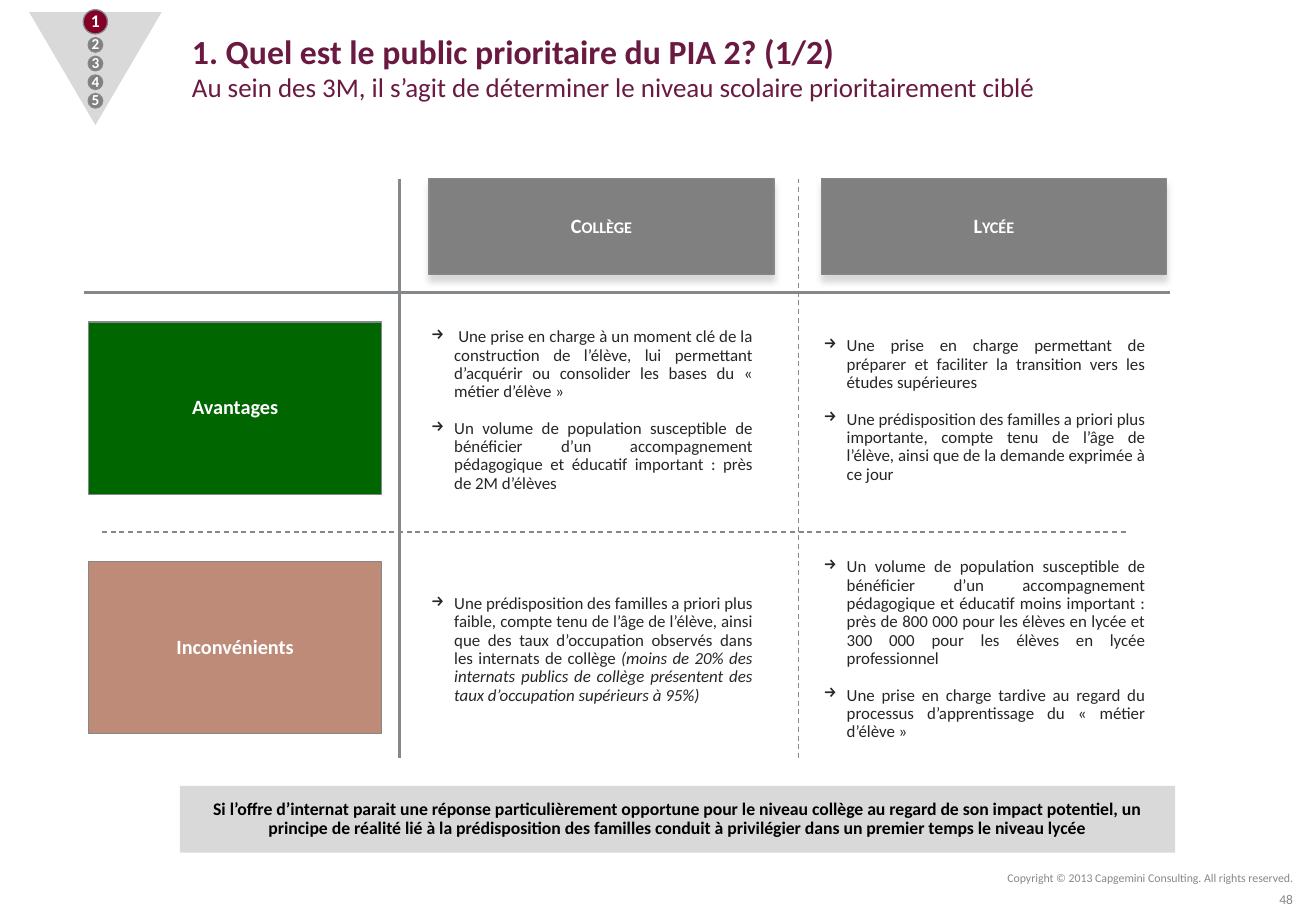
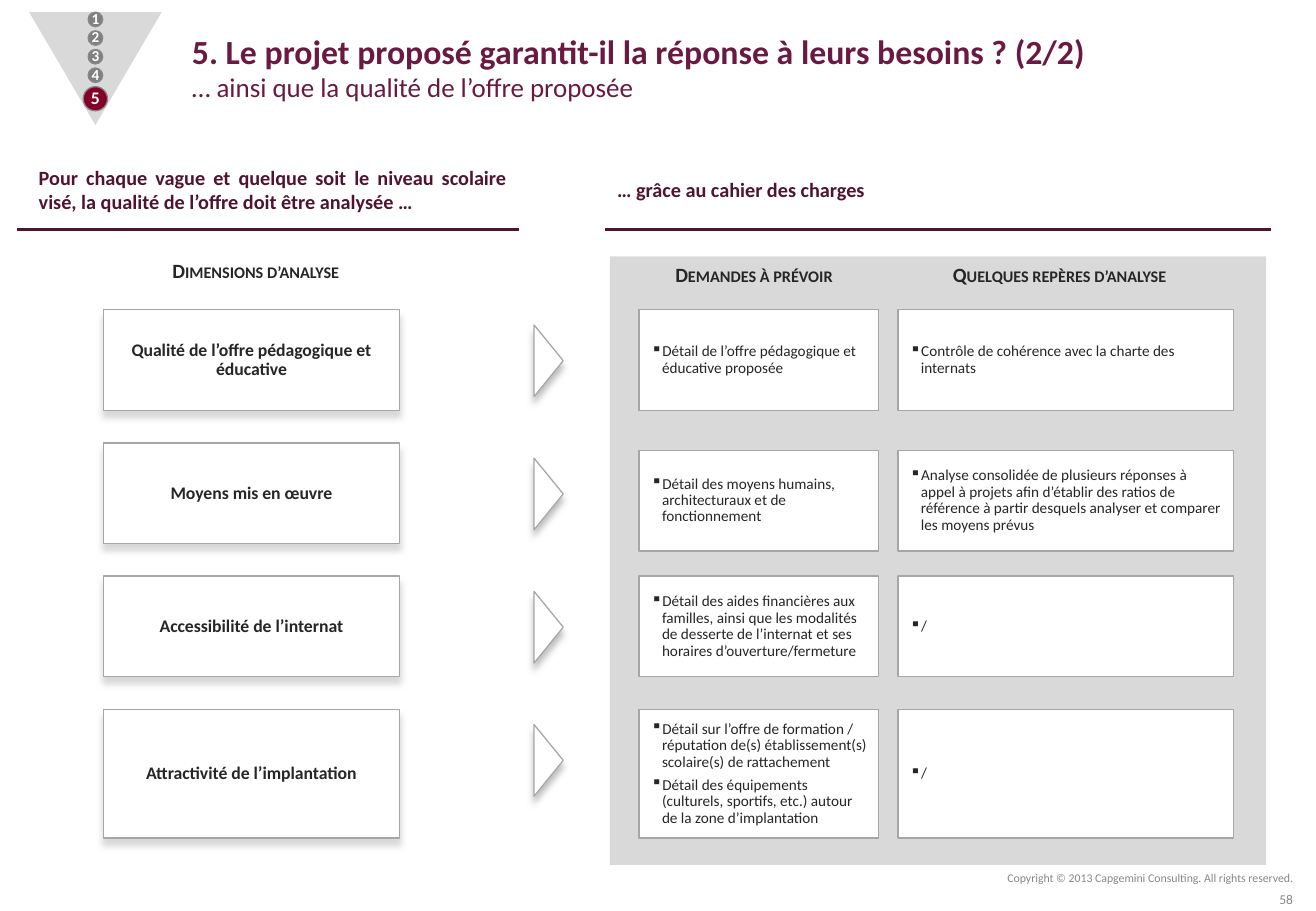
from dataclasses import dataclass, replace

from lxml.etree import SubElement
from pptx import Presentation
from pptx.dml.color import RGBColor
from pptx.enum.dml import MSO_LINE
from pptx.enum.shapes import MSO_CONNECTOR, MSO_SHAPE
from pptx.enum.text import MSO_ANCHOR as Anchor, MSO_AUTO_SIZE, PP_ALIGN as Align
from pptx.oxml.ns import qn
from pptx.util import Inches, Pt

# Theme
FONT = "Calibri"
PLUM = RGBColor(0x6A, 0x1A, 0x41)
DARK_PLUM = RGBColor(0x50, 0x14, 0x31)
CRIMSON = RGBColor(0x85, 0x00, 0x27)
GREEN = RGBColor(0x00, 0x66, 0x00)
TERRACOTTA = RGBColor(0xBE, 0x8B, 0x78)
INK = RGBColor(0x26, 0x26, 0x26)
BLACK = RGBColor(0, 0, 0)
WHITE = RGBColor(0xFF, 0xFF, 0xFF)
GREY = RGBColor(0x80, 0x80, 0x80)
RULE_GREY = RGBColor(0x85, 0x88, 0x8B)
EDGE_GREY = RGBColor(0xA6, 0xA6, 0xA6)
PALE_GREY = RGBColor(0xD9, 0xD9, 0xD9)
COPYRIGHT = "Copyright © 2013 Capgemini Consulting. All rights reserved."


@dataclass(frozen=True)
class Box:
    left: float
    top: float
    width: float
    height: float

    @property
    def emu(self):
        return [Inches(n) for n in (self.left, self.top, self.width, self.height)]


@dataclass(frozen=True)
class Style:
    size: float
    color: RGBColor
    bold: bool = False
    italic: bool = False
    small_caps: bool = False
    align: Align = Align.LEFT
    spacing: float = 0.9
    before: float = 0  # points between paragraphs
    bullet: str = ""
    indent: float = 0


LABEL = Style(12, WHITE, bold=True, align=Align.CENTER)
COLUMN_HEAD = replace(LABEL, small_caps=True)
DARK_HEAD = replace(COLUMN_HEAD, color=INK)
ARGUMENT = Style(10, INK, align=Align.JUSTIFY, before=11, bullet="→", indent=0.19)
DIMENSION = Style(10.5, INK, bold=True, align=Align.CENTER)
DETAIL = Style(9, INK, before=4, bullet="▪", indent=0.09)
SECTION = Style(12, DARK_PLUM, bold=True, align=Align.JUSTIFY, spacing=1)
FOOTER = Style(7, RULE_GREY, align=Align.RIGHT, spacing=1)


# Basic parts
def add_span(para, text, style):
    span = para.add_run()
    span.text = text
    font = span.font
    font.name, font.size = FONT, Pt(style.size)
    font.bold, font.italic = style.bold, style.italic
    font.color.rgb = style.color
    if style.small_caps:
        span._r.get_or_add_rPr().set("cap", "small")


def write(frame, paragraphs, style, anchor=Anchor.MIDDLE):
    """Each paragraph is a text or a list of (text, style) spans."""
    frame.word_wrap, frame.vertical_anchor = True, anchor
    for index, content in enumerate(paragraphs):
        para = frame.add_paragraph() if index else frame.paragraphs[0]
        if style.bullet:
            props = para._p.get_or_add_pPr()
            props.set("marL", str(Inches(style.indent)))
            props.set("indent", str(-Inches(style.indent)))
            SubElement(props, qn("a:buChar"), char=style.bullet)
        para.alignment, para.line_spacing = style.align, style.spacing
        para.space_before = Pt(style.before if index else 0)
        spans = [(content, style)] if isinstance(content, str) else content
        for text, span_style in spans:
            add_span(para, text, span_style)


def add_text(page, box, paragraphs, style, anchor=Anchor.MIDDLE):
    frame = page.shapes.add_textbox(*box.emu).text_frame
    write(frame, paragraphs, style, anchor)
    return frame


def add_panel(shapes, box, fill, edge=None, kind=MSO_SHAPE.RECTANGLE, shadow=None, turn=0):
    panel = shapes.add_shape(kind, *box.emu)
    panel.rotation = turn
    panel.shadow.inherit = False
    panel.fill.solid()
    panel.fill.fore_color.rgb = fill
    if edge is None:
        panel.line.fill.background()
    else:
        panel.line.color.rgb, panel.line.width = edge, Pt(0.75)
    if shadow:
        effects = panel._element.spPr.find(qn("a:effectLst"))
        outer = SubElement(effects, qn("a:outerShdw"), blurRad=str(Pt(4)),
                           dist=str(Pt(4)), dir="5400000", rotWithShape="0")
        SubElement(outer, qn("a:srgbClr"), val=shadow)
    return panel


def add_rule(page, start, end, color, width=1.75, dashed=False):
    ends = [Inches(n) for n in (*start, *end)]
    rule = page.shapes.add_connector(MSO_CONNECTOR.STRAIGHT, *ends)
    rule.line.color.rgb, rule.line.width = color, Pt(width)
    if dashed:
        rule.line.dash_style = MSO_LINE.DASH
    SubElement(rule._element.spPr, qn("a:effectLst"))


# Parts shared by both pages
def add_tracker(page, box, active, first_top):
    shapes = page.shapes.add_group_shape().shapes
    add_panel(shapes, box, PALE_GREY, kind=MSO_SHAPE.ISOSCELES_TRIANGLE, turn=180)
    center, top = box.left + box.width / 2, box.top + first_top
    for number in range(1, 6):
        current = number == active
        side = 0.2 if current else 0.12
        badge = add_panel(shapes, Box(center - side / 2, top, side, side),
                          CRIMSON if current else GREY, RULE_GREY, MSO_SHAPE.OVAL)
        frame = badge.text_frame
        frame.margin_left = frame.margin_right = frame.margin_top = frame.margin_bottom = 0
        write(frame, [str(number)], replace(LABEL, size=10.5 if current else 9))
        frame.word_wrap = False
        top += 0.23 if current else 0.46 / 3


def add_page(deck, title, subtitle, number, active, first_top):
    page = deck.slides.add_slide(deck.slide_layouts[5])
    holder = page.shapes.title
    holder.left, holder.top, holder.width, holder.height = Box(1.48, 0.13, 9.35, 0.84).emu
    frame = holder.text_frame
    frame.auto_size = MSO_AUTO_SIZE.NONE
    frame.vertical_anchor = Anchor.MIDDLE
    para = frame.paragraphs[0]
    para.alignment = Align.LEFT
    add_span(para, title, Style(20, PLUM, bold=True))
    para.add_line_break()
    add_span(para, subtitle, Style(16, PLUM))
    # Footer
    for box, text, size in ((Box(7.57, 7.12, 3.17, 0.22), COPYRIGHT, 7),
                            (Box(8.21, 7.34, 2.53, 0.13), number, 8)):
        footer = add_text(page, box, [text], replace(FOOTER, size=size))
        footer.margin_top = footer.margin_bottom = 0
    add_tracker(page, Box(0.24, 0.1, 1.09, 0.93), active, first_top)
    return page


# Page 1: pros and cons
def add_comparison(page, box, columns, rows):
    right, bottom = box.left + box.width, box.top + box.height
    column_step, row_step = 3.23, 1.97
    for index, heading in enumerate(columns):
        head = Box(box.left + 2.84 + index * column_step, box.top, 2.84, 0.79)
        panel = add_panel(page.shapes, head, GREY, RULE_GREY, shadow="D9D9D9")
        write(panel.text_frame, [heading], COLUMN_HEAD)
    # Grid rules
    divider, first_column, header_line = box.left + 5.88, box.left + 2.6, box.top + 0.94
    middle = box.top + 2.91
    add_rule(page, (divider, box.top), (divider, bottom), RULE_GREY, 0.75, True)
    add_rule(page, (box.left, header_line), (right, header_line), RULE_GREY)
    add_rule(page, (first_column, box.top), (first_column, bottom), RULE_GREY)
    add_rule(page, (box.left + 0.15, middle), (right - 0.35, middle), RULE_GREY, 0.75, True)
    # Row labels and arguments
    for row, (label, fill, cells) in enumerate(rows):
        top = box.top + 1.18 + row * row_step
        panel = add_panel(page.shapes, Box(box.left + 0.04, top, 2.41, 1.42), fill, RULE_GREY)
        write(panel.text_frame, [label], LABEL)
        for column, arguments in enumerate(cells):
            cell = Box(box.left + 2.76 + column * column_step, top - 0.08, 2.84, 1.62)
            add_text(page, cell, arguments, ARGUMENT)


def build_public_page(deck):
    page = add_page(deck, "1. Quel est le public prioritaire du PIA 2? (1/2)",
                    "Au sein des 3M, il s’agit de déterminer le niveau scolaire "
                    "prioritairement ciblé", "48", 1, -0.02)
    school_cons = [
        ("Une prédisposition des familles a priori plus faible, compte tenu de l’âge de "
         "l’élève, ainsi que des taux d’occupation observés dans les internats de collège ",
         ARGUMENT),
        ("(moins de 20% des internats publics de collège présentent des taux d’occupation "
         "supérieurs à 95%)", replace(ARGUMENT, italic=True))]
    rows = [
        ("Avantages", GREEN, [
            [" Une prise en charge à un moment clé de la construction de l’élève, lui "
             "permettant d’acquérir ou consolider les bases du « métier d’élève »",
             "Un volume de population susceptible de bénéficier d’un accompagnement "
             "pédagogique et éducatif important : près de 2M d’élèves"],
            ["Une prise en charge permettant de préparer et faciliter la transition vers "
             "les études supérieures",
             "Une prédisposition des familles a priori plus importante, compte tenu de "
             "l’âge de l’élève, ainsi que de la demande exprimée à ce jour"]]),
        ("Inconvénients", TERRACOTTA, [
            [school_cons],
            ["Un volume de population susceptible de bénéficier d’un accompagnement "
             "pédagogique et éducatif moins important : près de 800 000 pour les élèves "
             "en lycée et 300 000 pour les élèves en lycée professionnel",
             "Une prise en charge tardive au regard du processus d’apprentissage du "
             "« métier d’élève »"]])]
    add_comparison(page, Box(0.69, 1.47, 8.94, 4.77), ["Collège", "Lycée"], rows)
    # Conclusion
    conclusion = add_panel(page.shapes, Box(1.48, 6.47, 8.19, 0.55), PALE_GREY)
    write(conclusion.text_frame, [
        "Si l’offre d’internat parait une réponse particulièrement opportune pour le niveau "
        "collège au regard de son impact potentiel, un principe de réalité lié à la "
        "prédisposition des familles conduit à privilégier dans un premier temps le niveau "
        "lycée"], replace(DIMENSION, color=BLACK))


# Page 2: quality analysis
def add_section_head(page, box, text, inset):
    add_text(page, Box(box.left + inset, box.top, box.width - inset, 0.5), [text], SECTION)
    base = box.top + box.height
    add_rule(page, (box.left, base), (box.left + box.width, base), DARK_PLUM)


def add_analysis(page, box, rows):
    add_panel(page.shapes, Box(box.left + 4.17, box.top, 5.4, box.height), PALE_GREY)
    # Column headings
    headings = [("Dimensions d’analyse", 0.47, 2.13, -0.01, Align.LEFT),
                ("Demandes à prévoir", 4.41, 1.89, 0.02, Align.CENTER),
                ("Quelques repères d’analyse", 6.69, 2.36, 0.02, Align.CENTER)]
    for text, offset, width, drop, align in headings:
        add_text(page, Box(box.left + offset, box.top + drop, width, 0.28), [text],
                 replace(DARK_HEAD, align=align), Anchor.TOP)
    # One row for each dimension
    for index, (dimension, requests, markers) in enumerate(rows):
        top = box.top + 0.44 + index * 3.29 / 3
        height = 1.06 if index == len(rows) - 1 else 0.83
        panel = add_panel(page.shapes, Box(box.left, top, 2.44, height), WHITE, EDGE_GREY,
                          shadow="D9D9D9")
        write(panel.text_frame, [dimension], DIMENSION)
        add_panel(page.shapes, Box(box.left + 3.37, top + 0.3, 0.59, 0.24), WHITE, EDGE_GREY,
                  MSO_SHAPE.ISOSCELES_TRIANGLE, shadow="BFBFBF", turn=90)
        detail_top = top + (0.06 if index == 1 else 0)
        for offset, width, items in ((4.41, 1.97, requests), (6.54, 2.76, markers)):
            detail = add_panel(page.shapes, Box(box.left + offset, detail_top, width, height),
                               WHITE, EDGE_GREY)
            write(detail.text_frame, items, DETAIL)


def build_quality_page(deck):
    page = add_page(deck, "5. Le projet proposé garantit-il la réponse à leurs besoins ? (2/2)",
                    "… ainsi que la qualité de l’offre proposée", "58", 5, 0)
    add_section_head(page, Box(0.14, 1.31, 4.13, 0.58),
                     "Pour chaque vague et quelque soit le niveau scolaire visé, la qualité "
                     "de l’offre doit être analysée …", 0.08)
    add_section_head(page, Box(4.98, 1.31, 5.48, 0.58), "… grâce au cahier des charges", 0)
    add_analysis(page, Box(0.85, 2.11, 9.57, 5.01), [
        ("Qualité de l’offre pédagogique et éducative",
         ["Détail de l’offre pédagogique et éducative proposée"],
         ["Contrôle de cohérence avec la charte des internats"]),
        ("Moyens mis en œuvre",
         ["Détail des moyens humains, architecturaux et de fonctionnement"],
         ["Analyse consolidée de plusieurs réponses à appel à projets afin d’établir des "
          "ratios de référence à partir desquels analyser et comparer les moyens prévus"]),
        ("Accessibilité de l’internat",
         ["Détail des aides financières aux familles, ainsi que les modalités de desserte "
          "de l’internat et ses horaires d’ouverture/fermeture"], ["/"]),
        ("Attractivité de l’implantation",
         ["Détail sur l’offre de formation / réputation de(s) établissement(s) scolaire(s) "
          "de rattachement",
          "Détail des équipements (culturels, sportifs, etc.) autour de la zone "
          "d’implantation"], ["/"])])


def main():
    deck = Presentation()
    deck.slide_width, deck.slide_height = Inches(10.83), Inches(7.5)
    build_public_page(deck)
    build_quality_page(deck)
    deck.save("out.pptx")


if __name__ == "__main__":
    main()
